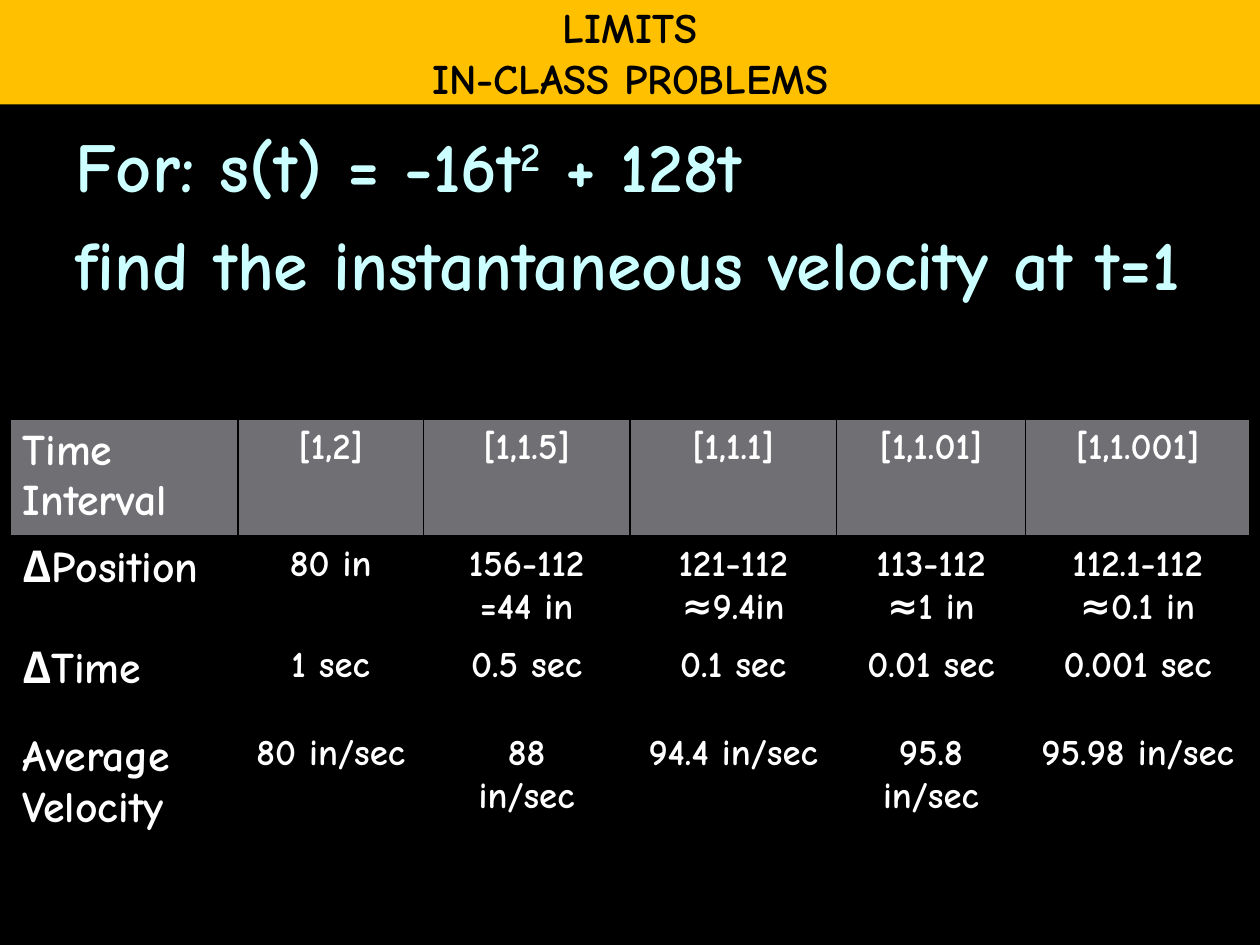
from dataclasses import dataclass

from lxml import etree
from pptx import Presentation
from pptx.dml.color import RGBColor
from pptx.enum import shapes, text
from pptx.oxml import ns
from pptx.util import Inches, Pt

FONT = "Comic Neue"
BLACK = RGBColor(0x00, 0x00, 0x00)
WHITE = RGBColor(0xFF, 0xFF, 0xFF)
GOLD = RGBColor(0xFF, 0xC0, 0x00)
PALE_CYAN = RGBColor(0xCC, 0xFF, 0xFF)
GRAY = RGBColor(0x6F, 0x6F, 0x74)
LEFT, CENTER = text.PP_ALIGN.LEFT, text.PP_ALIGN.CENTER

COLUMN_WIDTHS = (1.81, 1.47, 1.64, 1.64, 1.5, 1.78)
ROW_HEIGHT = 0.7


@dataclass(frozen=True)
class Measure:
    label: str
    values: tuple[str, ...]
    fill: RGBColor = BLACK
    rule_below: float = 1


MEASURES = (
    Measure("Time Interval",
            ("[1,2]", "[1,1.5]", "[1,1.1]", "[1,1.01]", "[1,1.001]"), GRAY, 3),
    Measure("ΔPosition",
            ("80 in", "156-112\n=44 in", "121-112\n≈9.4in",
             "113-112\n≈1 in", "112.1-112\n≈0.1 in")),
    Measure("ΔTime",
            ("1 sec", "0.5 sec", "0.1 sec", "0.01 sec", "0.001 sec")),
    Measure("Average Velocity",
            ("80 in/sec", "88\nin/sec", "94.4 in/sec",
             "95.8\nin/sec", "95.98 in/sec")),
)


def write(frame, wording: str, *, size: float, color: RGBColor,
          align=LEFT, space_before: float = 0) -> None:
    for index, line in enumerate(wording.split("\n")):
        paragraph = frame.add_paragraph() if index else frame.paragraphs[0]
        paragraph.alignment = align
        paragraph.space_before = Pt(space_before)
        for part, piece in enumerate(line.split("^")):
            run = paragraph.add_run()
            run.text = piece
            run.font.name = FONT
            run.font.size = Pt(size)
            run.font.bold = True
            run.font.color.rgb = color
            if part % 2:
                run.font._element.set("baseline", "30000")


def draw_borders(cell, bottom: float, top: float) -> None:
    properties = cell._tc.get_or_add_tcPr()
    for side, width in (("L", 1), ("R", 1), ("T", top), ("B", bottom)):
        border = etree.SubElement(properties, ns.qn(f"a:ln{side}"), w=str(Pt(width)))
        fill = etree.SubElement(border, ns.qn("a:solidFill"))
        etree.SubElement(fill, ns.qn("a:srgbClr"), val=str(BLACK))


def draw_banner(slide) -> None:
    banner = slide.shapes.add_shape(shapes.MSO_SHAPE.RECTANGLE, 0, 0,
                                    Inches(10), Inches(0.83))
    banner.shadow.inherit = False
    banner.fill.solid()
    banner.fill.fore_color.rgb = GOLD
    banner.line.fill.background()
    banner.text_frame.word_wrap = False
    banner.text_frame.vertical_anchor = text.MSO_ANCHOR.MIDDLE
    write(banner.text_frame, "LIMITS\nIN-CLASS PROBLEMS",
          size=24, color=BLACK, align=CENTER)


def draw_problem(slide) -> None:
    problem = slide.shapes.add_textbox(Inches(0.5), Inches(0.92),
                                       Inches(9), Inches(6.17))
    problem.text_frame.word_wrap = True
    write(problem.text_frame,
          "For: s(t) = -16t^2^ + 128t\nfind the instantaneous velocity at t=1",
          size=40, color=PALE_CYAN, space_before=8)


def draw_velocity_table(slide, measures: tuple[Measure, ...]) -> None:
    table = slide.shapes.add_table(
        len(measures), len(COLUMN_WIDTHS), Inches(0.08), Inches(3.33),
        Inches(sum(COLUMN_WIDTHS)), Inches(ROW_HEIGHT * len(measures))).table
    table.horz_banding = False
    for column, width in zip(table.columns, COLUMN_WIDTHS):
        column.width = Inches(width)
    rule_above = 1
    for row, measure in enumerate(measures):
        table.rows[row].height = Inches(ROW_HEIGHT)
        for column, wording in enumerate((measure.label, *measure.values)):
            cell = table.cell(row, column)
            draw_borders(cell, measure.rule_below, rule_above)
            cell.fill.solid()
            cell.fill.fore_color.rgb = measure.fill
            write(cell.text_frame, wording, size=21 if column else 25,
                  color=WHITE, align=CENTER if column else LEFT)
        rule_above = measure.rule_below


def main() -> None:
    deck = Presentation()
    deck.slide_width, deck.slide_height = Inches(10), Inches(7.5)
    slide = deck.slides.add_slide(deck.slide_layouts[6])
    slide.background.fill.solid()
    slide.background.fill.fore_color.rgb = BLACK
    draw_problem(slide)
    draw_banner(slide)
    draw_velocity_table(slide, MEASURES)
    deck.save("out.pptx")


if __name__ == "__main__":
    main()
